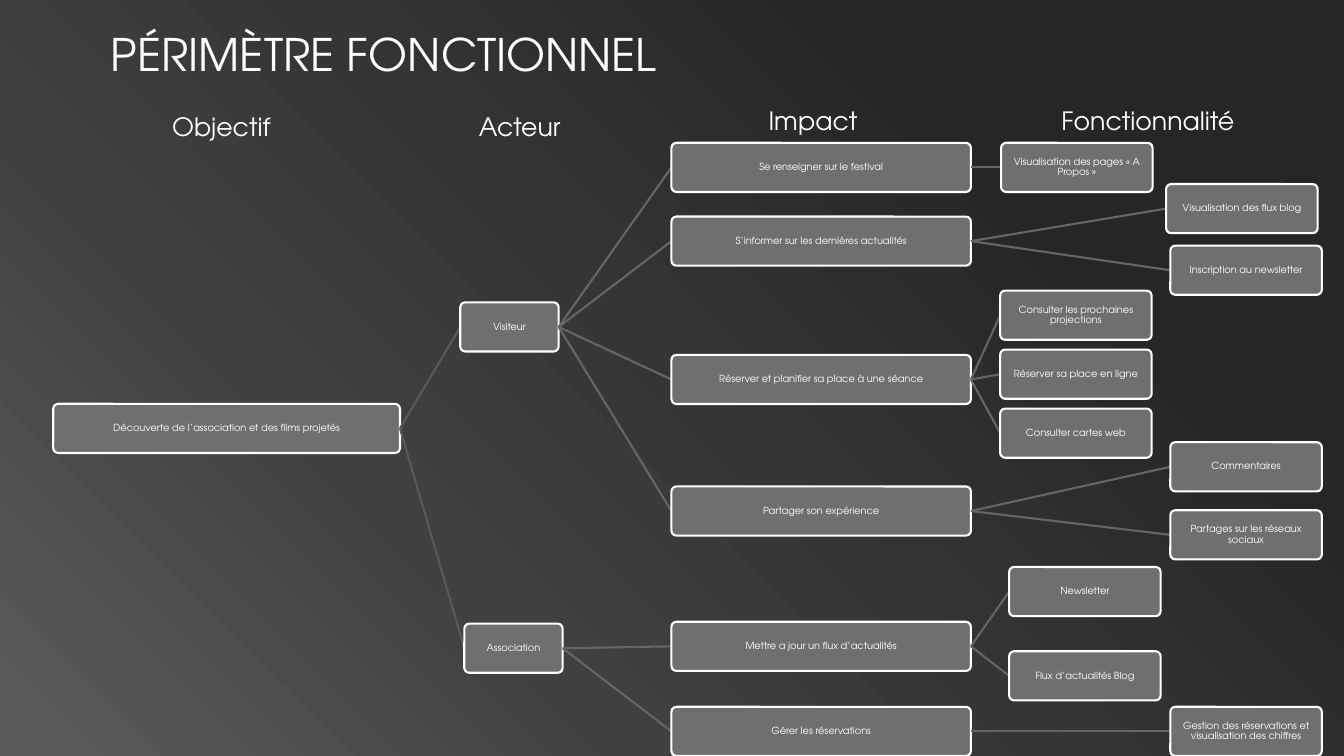
from dataclasses import dataclass
from typing import Any

import lxml.etree
import pptx
import pptx.dml.color
import pptx.enum.shapes
import pptx.enum.text
import pptx.oxml
import pptx.oxml.ns
import pptx.util

SHAPES = pptx.enum.shapes
TEXT = pptx.enum.text


@dataclass(frozen=True)
class Theme:
    font: str = "TeX Gyre Adventor"
    text: str = "FFFFFF"
    title_end: str = "A6A6A6"
    box: str = "6F6F6F"
    border: str = "FFFFFF"
    goal_link: str = "595959"
    link: str = "656565"
    backdrop: tuple = ((0, "262626"), (24, "262626"), (69, "404040"), (97, "595959"))
    title_size: float = 32
    heading_size: float = 18
    box_size: float = 7
    line: float = 1.5


@dataclass(frozen=True)
class Column:
    """Left edge and width, in percent of the slide's width."""
    left: float
    width: float


@dataclass(frozen=True)
class Node:
    """A box centred on a row given in percent of the slide's height."""
    text: str
    column: Column
    row: float
    children: tuple = ()
    link: str = Theme.link


@dataclass(frozen=True)
class Heading:
    text: str
    left: float
    top: float


THEME = Theme()
WIDTH, HEIGHT = pptx.util.Inches(13.33), pptx.util.Inches(7.5)
BOX_HEIGHT = 6.5

# Grid columns
GOAL = Column(3.96, 25.8)
VISITOR = Column(34.25, 7.32)
ASSOCIATION = Column(34.55, 7.32)
IMPACT = Column(49.96, 22.28)
NEAR, NEAR_LIST, NEAR_LOW = (Column(x, 11.27) for x in (74.49, 74.42, 75.09))
FAR_BLOG, FAR = (Column(x, 11.27) for x in (86.77, 87.08))

HEADINGS = (
    Heading("Objectif", 1.88, 14.1),
    Heading("Acteur", 24.08, 14.1),
    Heading("Impact", 45.91, 13.3),
    Heading("Fonctionnalité", 70.82, 13.3),
)

# Impact map: goal, actors, impacts, features
TREE = Node("Découverte de l’association et des films projetés", GOAL, 56.67, (
    Node("Visiteur", VISITOR, 43.25, (
        Node("Se renseigner sur le festival", IMPACT, 22.15, (
            Node("Visualisation des pages « A Propos »", NEAR, 22.15),
        )),
        Node("S’informer sur les dernières actualités", IMPACT, 31.9, (
            Node("Visualisation des flux blog", FAR_BLOG, 27.6),
            Node("Inscription au newsletter", FAR, 35.75),
        )),
        Node("Réserver et planifier sa place à une séance", IMPACT, 50.2, (
            Node("Consulter les prochaines projections", NEAR_LIST, 41.7),
            Node("Réserver sa place en ligne", NEAR_LIST, 49.5),
            Node("Consulter cartes web", NEAR_LIST, 57.3),
        )),
        Node("Partager son expérience", IMPACT, 67.6, (
            Node("Commentaires", FAR, 61.75),
            Node("Partages sur les réseaux sociaux", FAR, 70.75),
        )),
    ), THEME.goal_link),
    Node("Association", ASSOCIATION, 85.75, (
        Node("Mettre a jour un flux d’actualités", IMPACT, 85.5, (
            Node("Newsletter", NEAR_LOW, 78.25),
            Node("Flux d’actualités Blog", NEAR_LOW, 89.4),
        )),
        Node("Gérer les réservations", IMPACT, 96.75, (
            Node("Gestion des réservations et visualisation des chiffres", FAR, 96.75),
        )),
    ), THEME.goal_link),
))


def across(share: float) -> int:
    return round(WIDTH * share / 100)


def down(share: float) -> int:
    return round(HEIGHT * share / 100)


def rgb(value: str) -> pptx.dml.color.RGBColor:
    return pptx.dml.color.RGBColor.from_string(value)


def write(sp: Any, text: str, *, size: float, align: Any = TEXT.PP_ALIGN.CENTER,
          anchor: Any = TEXT.MSO_ANCHOR.MIDDLE, margin: float | None = None,
          spacing: float = 1, after: float = 0) -> Any:
    tf = sp.text_frame
    tf.word_wrap, tf.auto_size, tf.vertical_anchor = True, TEXT.MSO_AUTO_SIZE.NONE, anchor
    if margin is not None:
        inset = pptx.util.Inches(margin)
        tf.margin_left = tf.margin_right = tf.margin_top = tf.margin_bottom = inset
    p = tf.paragraphs[0]
    p.alignment, p.line_spacing, p.space_after = align, spacing, pptx.util.Pt(after)
    r = p.add_run()
    r.text = text
    r.font.name, r.font.size = THEME.font, pptx.util.Pt(size)
    r.font.color.rgb = rgb(THEME.text)
    return r


def draw_backdrop(s: Any) -> None:
    fill = s.background.fill
    fill.solid()
    stops = "".join(f'<a:gs pos="{pos * 1000}"><a:srgbClr val="{color}"/></a:gs>'
                    for pos, color in THEME.backdrop)
    grad = pptx.oxml.parse_xml(
        f'<a:gradFill {pptx.oxml.ns.nsdecls("a")} rotWithShape="1"><a:gsLst>{stops}</a:gsLst>'
        '<a:path path="circle"><a:fillToRect l="100000" b="100000"/></a:path></a:gradFill>')
    bg_pr = s.background._cSld.bg.bgPr
    bg_pr.replace(bg_pr.find(pptx.oxml.ns.qn("a:solidFill")), grad)


def draw_title(s: Any, text: str) -> None:
    sp = s.shapes.title
    sp.left, sp.top, sp.width, sp.height = across(7.5), 0, across(84.92), down(14.13)
    r = write(sp, text, size=THEME.title_size, align=TEXT.PP_ALIGN.LEFT)
    r.font.fill.gradient()
    r.font.fill.gradient_angle = 267
    for stop, color in zip(r.font.fill.gradient_stops, (THEME.text, THEME.title_end)):
        stop.color.rgb = rgb(color)


def draw_heading(s: Any, heading: Heading) -> None:
    sp = s.shapes.add_textbox(across(heading.left), down(heading.top), across(29.18), down(5.4))
    write(sp, heading.text, size=THEME.heading_size, anchor=TEXT.MSO_ANCHOR.TOP)


def draw_link(s: Any, parent: Node, child: Node) -> None:
    line = s.shapes.add_connector(
        SHAPES.MSO_CONNECTOR.STRAIGHT,
        across(parent.column.left + parent.column.width), down(parent.row),
        across(child.column.left), down(child.row))
    line.line.color.rgb, line.line.width = rgb(child.link), pptx.util.Pt(THEME.line)
    lxml.etree.SubElement(line._element.spPr, pptx.oxml.ns.qn("a:effectLst"))


def draw_node(s: Any, node: Node) -> None:
    sp = s.shapes.add_shape(
        SHAPES.MSO_SHAPE.ROUNDED_RECTANGLE, across(node.column.left),
        down(node.row - BOX_HEIGHT / 2), across(node.column.width), down(BOX_HEIGHT))
    sp.adjustments[0] = 0.1
    sp.shadow.inherit = False
    sp.fill.solid()
    sp.fill.fore_color.rgb = rgb(THEME.box)
    sp.line.color.rgb, sp.line.width = rgb(THEME.border), pptx.util.Pt(THEME.line)
    write(sp, node.text, size=THEME.box_size, margin=0.02, spacing=0.9, after=2.45)
    for child in node.children:
        draw_link(s, node, child)
        draw_node(s, child)


def main() -> None:
    prs = pptx.Presentation()
    prs.slide_width, prs.slide_height = WIDTH, HEIGHT
    s = prs.slides.add_slide(prs.slide_layouts.get_by_name("Title Only"))
    draw_backdrop(s)
    draw_title(s, "PÉRIMÈTRE FONCTIONNEL")
    draw_node(s, TREE)
    for heading in HEADINGS:
        draw_heading(s, heading)
    prs.save("out.pptx")


if __name__ == "__main__":
    main()
